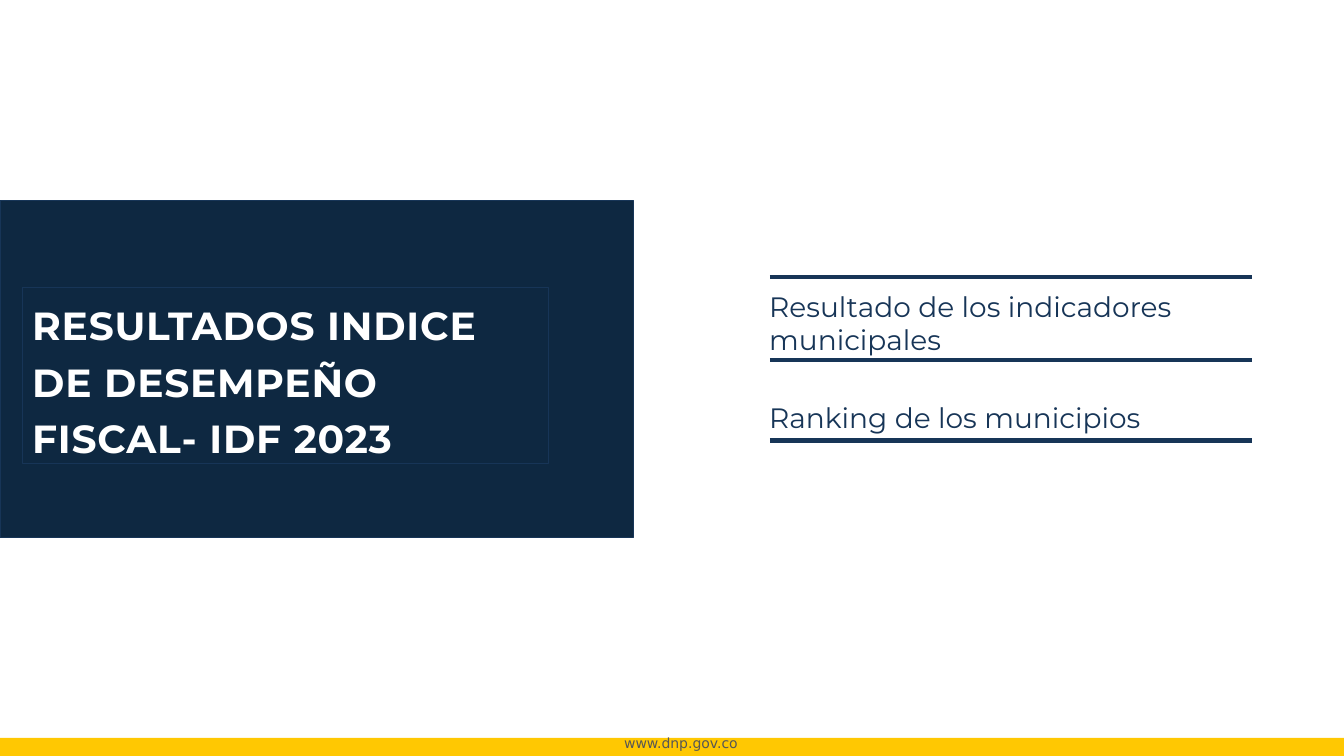
from lxml.etree import SubElement as Sub
from pptx import Presentation
from pptx.dml.color import RGBColor as RGB
from pptx.enum.shapes import MSO_CONNECTOR as Conn, MSO_SHAPE as Kind
from pptx.enum.text import MSO_ANCHOR as Anchor, MSO_AUTO_SIZE as Fit, PP_ALIGN as Align
from pptx.oxml.ns import qn
from pptx.util import Pt


def color(code):
    return RGB.from_string(code)


class Deck:
    """Holds the style and the current slide, and draws each kind of element."""

    navy, dark, gold, gray, white = "173557", "0E2841", "FFC802", "575756", "FFFFFF"
    face = "Montserrat"

    def __init__(self):
        self.prs = Presentation()
        self.prs.slide_width, self.prs.slide_height = Pt(960), Pt(540)
        self.slide = self.prs.slides.add_slide(self.prs.slide_layouts[3])
        self.shapes = self.slide.shapes

    def place(self, shape, box):
        for name, size in zip(("left", "top", "width", "height"), box):
            setattr(shape, name, Pt(size))

    def paint(self, shape, fill, line=None, width=1):
        shape.fill.solid()
        shape.fill.fore_color.rgb = color(fill)
        if line:
            shape.line.color.rgb = color(line)
            shape.line.width = Pt(width)
        else:
            shape.line.fill.background()

    def rect(self, box, fill, line=None):
        shape = self.shapes.add_shape(Kind.RECTANGLE, *map(Pt, box))
        shape.shadow.inherit = False
        self.paint(shape, fill, line)

    def rule(self, left, right, top):
        line = self.shapes.add_connector(Conn.STRAIGHT, *map(Pt, (left, top, right, top)))
        line.line.color.rgb = color(self.navy)
        line.line.width = Pt(3)
        Sub(line.element.spPr, qn("a:effectLst"))

    def letter(self, shape, text, tone, form, align=Align.LEFT, lead=1.0, track=0):
        frame = shape.text_frame
        frame.word_wrap, frame.auto_size = True, Fit.NONE
        frame.vertical_anchor = Anchor.TOP
        para = frame.paragraphs[0]
        para.alignment, para.line_spacing, para.space_before = align, lead, Pt(0)
        run = para.add_run()
        run.text = text
        for name, value in form.items():
            setattr(run.font, name, value)
        run.font.color.rgb = color(tone)
        if track:
            run._r.get_or_add_rPr().set("spc", str(track))

    def title(self, text, box):
        shape = self.shapes.title
        self.shapes.element.append(shape.element)
        self.place(shape, box)
        self.paint(shape, self.dark, self.navy, 0.75)
        form = {"name": self.face, "size": Pt(28), "bold": True}
        self.letter(shape, text, self.white, form, lead=1.2, track=60)

    def item(self, index, text, box):
        shape = self.slide.placeholders[index]
        self.place(shape, box)
        props = shape.text_frame.paragraphs[0]._p.get_or_add_pPr()
        for name in ("marL", "indent"):
            props.set(name, "0")
        Sub(props, qn("a:buNone"))
        self.letter(shape, text, self.navy, {"name": self.face, "size": Pt(20)})

    def label(self, text, box):
        shape = self.shapes.add_textbox(*map(Pt, box))
        form = {"name": "DejaVu Sans", "size": Pt(10)}
        self.letter(shape, text, self.gray, form, Align.CENTER)


def main():
    deck = Deck()
    deck.rect((0, 527, 960, 13), deck.gold)
    deck.label("www.dnp.gov.co", (410.4, 521.3, 152, 19))
    deck.item(1, "Resultado de los indicadores municipales", (542.2, 203, 368, 55.4))
    deck.item(2, "Ranking de los municipios", (542.2, 282.2, 302.4, 31.7))
    for top in (198, 257, 314.6):
        deck.rule(550, 894.2, top)
    deck.rect((0, 143.3, 452.5, 240.5), deck.dark, deck.navy)
    deck.title("RESULTADOS INDICE DE DESEMPEÑO FISCAL- IDF 2023", (15.8, 205.2, 375.8, 126))
    deck.prs.save("out.pptx")


if __name__ == "__main__":
    main()
